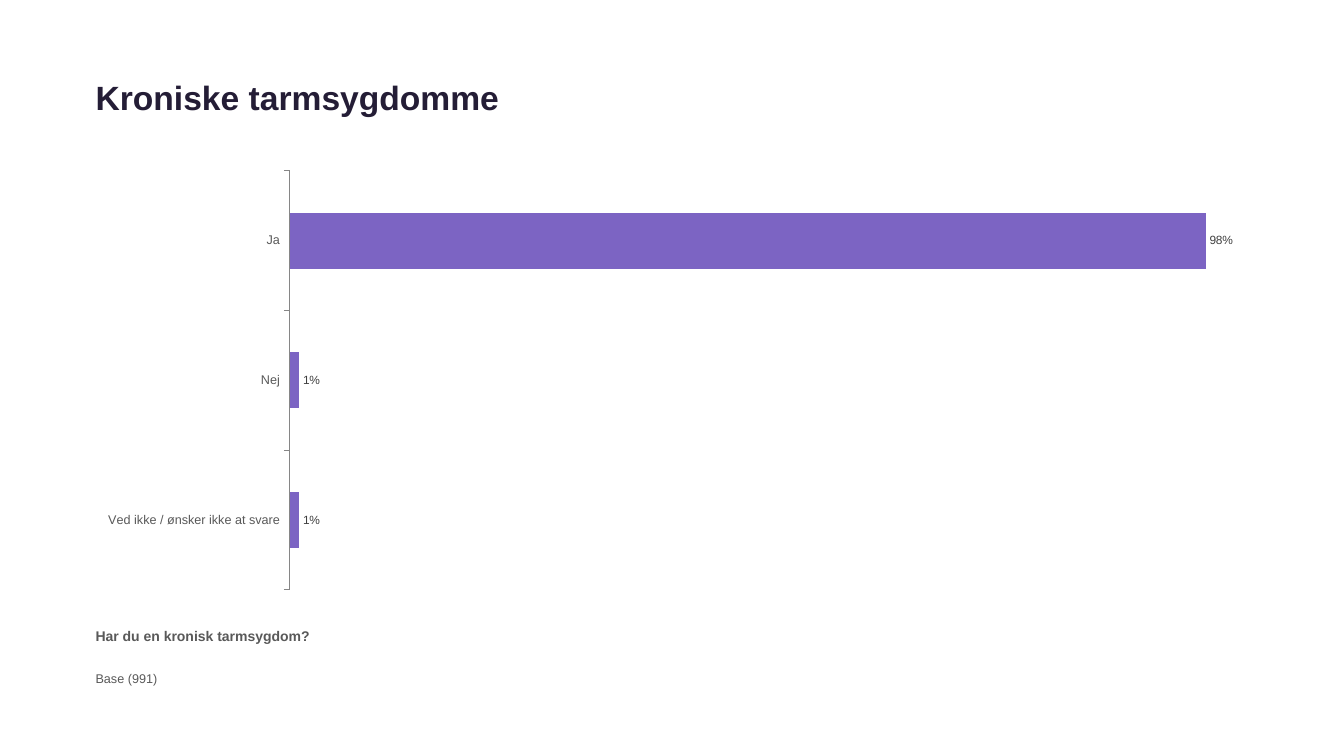
from pptx import Presentation
from pptx.chart.data import CategoryChartData
from pptx.dml.color import RGBColor
from pptx.enum.chart import XL_CHART_TYPE, XL_LABEL_POSITION, XL_TICK_LABEL_POSITION, XL_TICK_MARK
from pptx.enum.text import MSO_ANCHOR
from pptx.oxml import parse_xml
from pptx.oxml.ns import nsdecls, qn
from pptx.util import Inches, Pt

BAR = XL_CHART_TYPE.BAR_CLUSTERED
OUT_END = XL_LABEL_POSITION.OUTSIDE_END
LOW = XL_TICK_LABEL_POSITION.LOW
NONE, OUT = XL_TICK_MARK.NONE, XL_TICK_MARK.OUTSIDE
TOP, MIDDLE = MSO_ANCHOR.TOP, MSO_ANCHOR.MIDDLE
COLORS = {"title": "241D36", "text": "595959", "label": "404040",
          "bar": "7C64C3", "axis": "868686", "base": "000000"}


def style(font, size, color, bold=False):
    font.name = "Arial"
    font.size = Pt(size)
    font.bold = bold
    font.color.rgb = RGBColor.from_string(COLORS[color])


prs = Presentation()
prs.slide_width, prs.slide_height = Inches(13.33), Inches(7.5)
slide = prs.slides.add_slide(prs.slide_layouts[6])

texts = [
    ("Kroniske tarmsygdomme", 0.71, 0.5, 24, "title", True, MIDDLE),
    ("Har du en kronisk tarmsygdom?", 6.18, 0.43, 10, "text", True, TOP),
    ("Base (991)", 6.61, 0.28, 9, "text", False, TOP),
]
for text, top, height, size, color, bold, anchor in texts:
    box = slide.shapes.add_textbox(Inches(0.85), Inches(top), Inches(11.63), Inches(height))
    frame = box.text_frame
    frame.word_wrap = True
    frame.vertical_anchor = anchor
    frame.text = text
    style(frame.paragraphs[0].runs[0].font, size, color, bold)

data = CategoryChartData(number_format="0%")
data.categories = ["Ved ikke / ønsker ikke at svare", "Nej", "Ja"]
data.add_series("Series 1", [0.01, 0.01, 0.98])
chart = slide.shapes.add_chart(
    BAR, Inches(0.85), Inches(1.61), Inches(11.5), Inches(4.33), data).chart
chart.has_title = False
chart.has_legend = False
style(chart.font, 18, "base")

cats = chart.category_axis
cats.tick_label_position = LOW
cats.major_tick_mark = OUT
cats.minor_tick_mark = NONE
cats.has_major_gridlines = False
cats.format.line.color.rgb = RGBColor.from_string(COLORS["axis"])
cats.format.line.width = Pt(0.75)
style(cats.tick_labels.font, 9, "text")

scale = chart.value_axis
scale.minimum_scale, scale.maximum_scale = 0, 1
scale.major_unit = 0.1
scale.has_major_gridlines = False
scale.tick_labels.number_format = "0.00%"
scale.tick_labels.number_format_is_linked = False
scale.visible = False

plot = chart.plots[0]
plot.gap_width = 150
plot.overlap = -10
plot.vary_by_categories = False
fill = plot.series[0].format.fill
fill.solid()
fill.fore_color.rgb = RGBColor.from_string(COLORS["bar"])

labels = plot.series[0].data_labels
labels.show_value = True
labels.position = OUT_END
labels.number_format = "0%"
labels.number_format_is_linked = False
style(labels.font, 8.5, "label")

area = chart.element.find(".//" + qn("c:plotArea"))
for old in area.findall(qn("c:layout")):
    area.remove(old)
area.insert(0, parse_xml(
    f'<c:layout {nsdecls("c")}><c:manualLayout><c:layoutTarget val="inner"/>'
    '<c:xMode val="edge"/><c:yMode val="edge"/><c:x val="0.176"/><c:y val="0.02"/>'
    '<c:w val="0.806"/><c:h val="0.96"/></c:manualLayout></c:layout>'))

prs.save("out.pptx")
